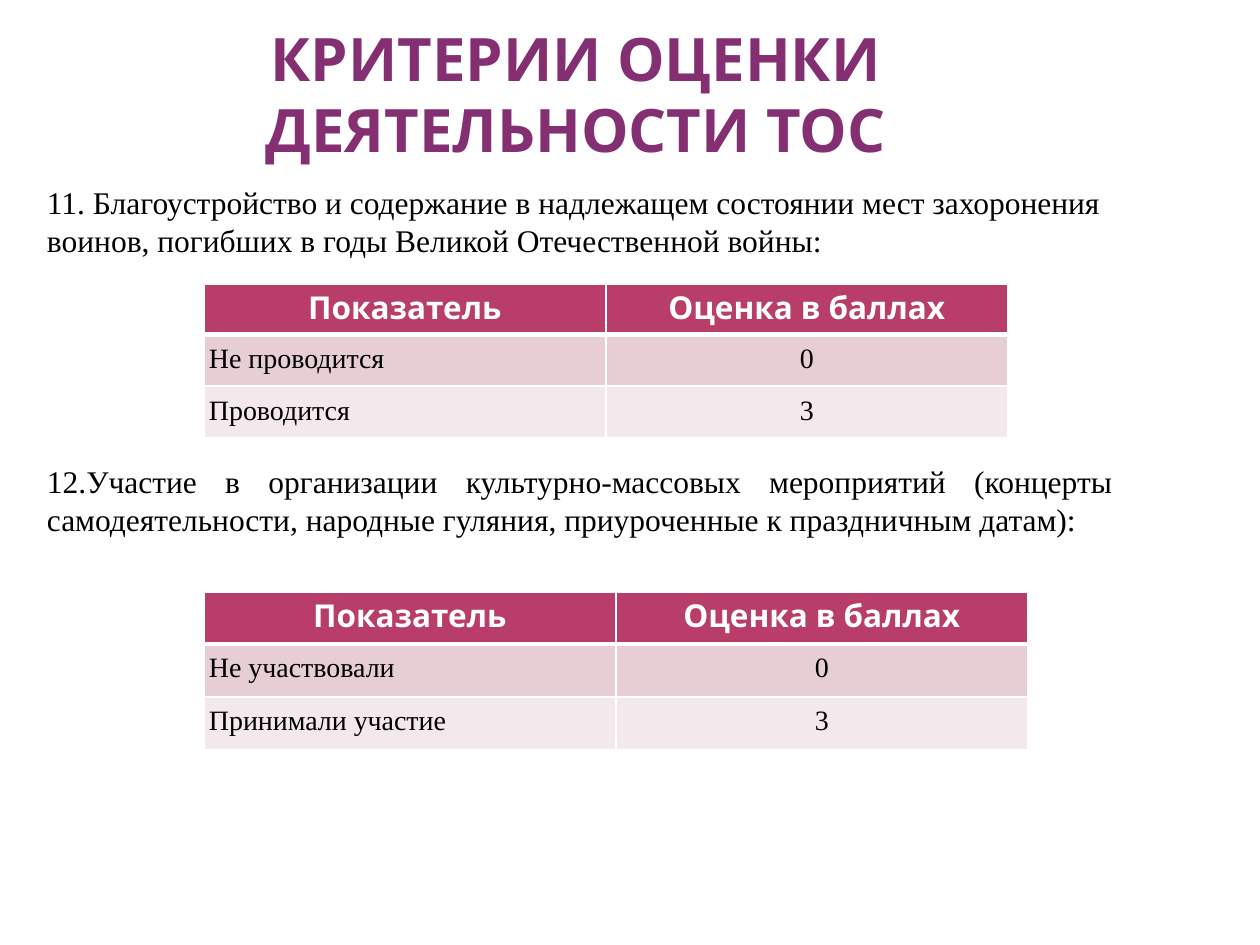
from lxml import etree
from pptx import Presentation
from pptx.dml.color import RGBColor
from pptx.enum.text import MSO_ANCHOR as Anchor, PP_ALIGN as Align
from pptx.oxml.ns import qn
from pptx.util import Emu, Pt

PX = 914400 / 126
PURPLE = RGBColor(0x85, 0x2F, 0x73)
CRIMSON = RGBColor(0xB8, 0x3D, 0x68)
ROSE = RGBColor(0xE6, 0xCE, 0xD4)
PALE_ROSE = RGBColor(0xF3, 0xE8, 0xEB)
WHITE = RGBColor(0xFF, 0xFF, 0xFF)
BLACK = RGBColor(0, 0, 0)

TITLE_FONT = {"name": "Karla", "size": Pt(34.2), "bold": True}
HEADER_FONT = {"name": "Karla", "size": Pt(18), "bold": True}
CRITERION_FONT = {"name": "Times New Roman", "size": Pt(18), "bold": False}
CELL_FONT = {"name": "Times New Roman", "size": Pt(16), "bold": False}
HEADERS = ("Показатель", "Оценка в баллах")


def px(length):
    """Turn pixels into EMU."""
    return Emu(round(length * PX))


def set_attributes(target, values):
    """Set each named attribute of the target."""
    for name, value in values.items():
        setattr(target, name, value)


def write_text(frame, text, font, color, alignment):
    """Put one formatted paragraph into a text frame."""
    frame.text = text
    paragraph = frame.paragraphs[0]
    paragraph.alignment = alignment
    run_font = paragraph.runs[0].font
    set_attributes(run_font, font)
    run_font.color.rgb = color


def set_margins(target, horizontal, vertical):
    """Set equal side margins and equal top and bottom margins."""
    set_attributes(target, {
        "margin_left": px(horizontal), "margin_right": px(horizontal),
        "margin_top": px(vertical), "margin_bottom": px(vertical)})


def add_title(slide, text):
    """Place and format the slide title."""
    title = slide.shapes.title
    set_attributes(title, {"left": px(35), "top": px(38),
                           "width": px(1081), "height": px(127)})
    frame = title.text_frame
    frame.word_wrap = True
    frame.vertical_anchor = Anchor.BOTTOM
    set_margins(frame, 6, 0)
    write_text(frame, text, TITLE_FONT, PURPLE, Align.CENTER)


def add_criterion(slide, top, text, alignment):
    """Add the wording of one criterion."""
    box = slide.shapes.add_textbox(px(47), px(top), px(1066), px(76))
    frame = box.text_frame
    frame.word_wrap = True
    set_margins(frame, 0, 0)
    write_text(frame, text, CRITERION_FONT, BLACK, alignment)


def set_borders(cell, bottom_width):
    """Draw white borders round a cell."""
    properties = cell._tc.get_or_add_tcPr()
    widths = {"a:lnL": 1, "a:lnR": 1, "a:lnT": 1, "a:lnB": bottom_width}
    for position, (tag, width) in enumerate(widths.items()):
        line = etree.Element(qn(tag), w=str(Pt(width)))
        fill = etree.SubElement(line, qn("a:solidFill"))
        etree.SubElement(fill, qn("a:srgbClr"), val=str(WHITE))
        properties.insert(position, line)


def fill_cell(cell, text, row, column):
    """Write and format a cell by its place in the table."""
    is_header = row == 0
    cell.fill.solid()
    cell.fill.fore_color.rgb = (CRIMSON, ROSE, PALE_ROSE)[row]
    set_borders(cell, 3 if row == 0 else 1)
    if is_header:
        write_text(cell.text_frame, text, HEADER_FONT, WHITE, Align.CENTER)
    else:
        set_margins(cell, 5, 9)
        alignment = Align.CENTER if column else Align.JUSTIFY
        write_text(cell.text_frame, text, CELL_FONT, BLACK, alignment)


def add_score_table(slide, top, column_width, row_heights, scores):
    """Add a table of indicators and their scores."""
    rows = [HEADERS, *scores]
    frame = slide.shapes.add_table(len(rows), len(HEADERS), px(204), px(top),
                                   px(column_width * len(HEADERS)), px(sum(row_heights)))
    table = frame.table
    for column in table.columns:
        column.width = px(column_width)
    for row, values in enumerate(rows):
        table.rows[row].height = px(row_heights[row])
        for column, text in enumerate(values):
            fill_cell(table.cell(row, column), text, row, column)


def main():
    """Build and save the slide."""
    presentation = Presentation()
    presentation.slide_width, presentation.slide_height = px(1260), px(945)
    slide = presentation.slides.add_slide(presentation.slide_layouts[5])
    add_title(slide, "КРИТЕРИИ ОЦЕНКИ ДЕЯТЕЛЬНОСТИ ТОС")
    add_criterion(slide, 183, "11. Благоустройство и содержание в надлежащем состоянии мест "
                  "захоронения воинов, погибших в годы Великой Отечественной войны:", Align.LEFT)
    add_score_table(slide, 284, 402, (49, 49, 49),
                    [("Не проводится", "0"), ("Проводится", "3")])
    add_criterion(slide, 462, "12.Участие в организации культурно-массовых мероприятий (концерты "
                  "самодеятельности, народные гуляния, приуроченные к праздничным датам):",
                  Align.JUSTIFY)
    add_score_table(slide, 592, 412, (52, 53, 53),
                    [("Не участвовали", "0"), ("Принимали участие", "3")])
    presentation.save("out.pptx")


if __name__ == "__main__":
    main()
